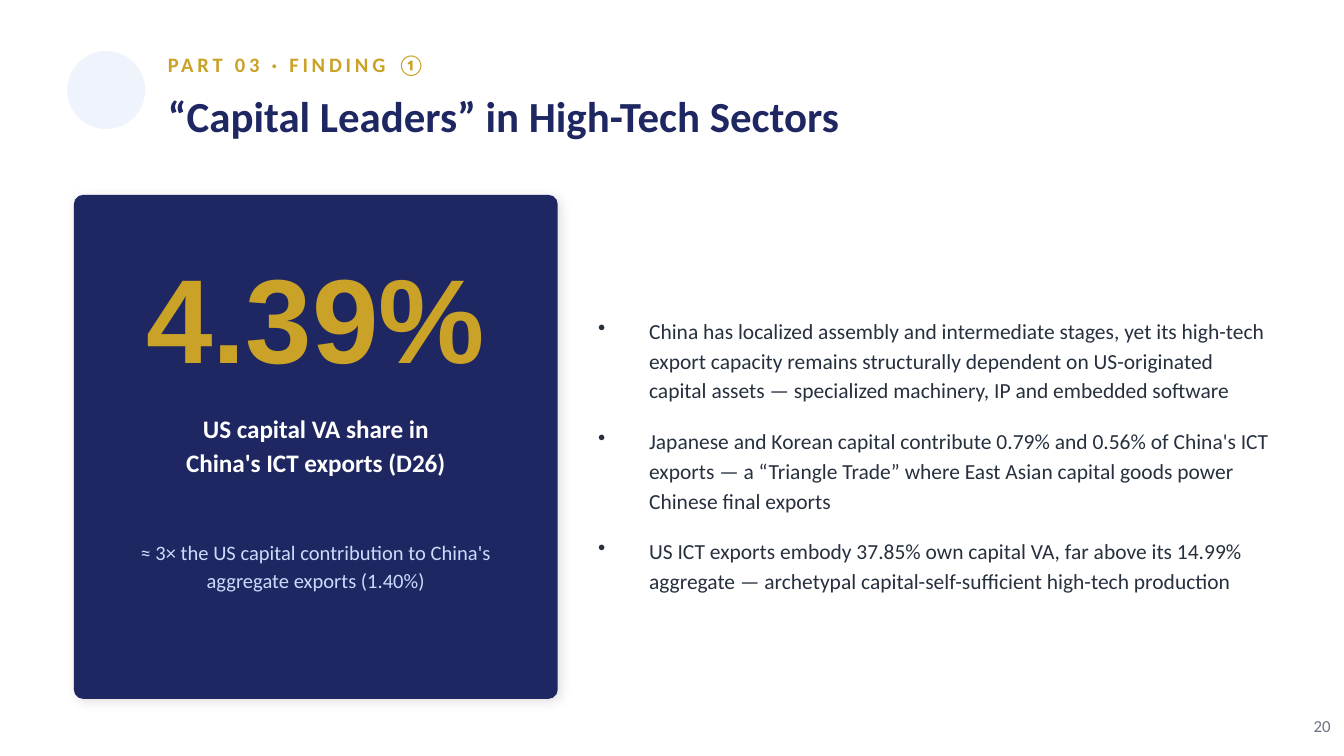
"""Build the "Capital Leaders" finding slide."""
from dataclasses import dataclass

from lxml import etree
from pptx import Presentation
from pptx import util as u
from pptx.dml.color import RGBColor
from pptx.enum import shapes, text
from pptx.oxml.ns import qn


@dataclass(frozen=True)
class Theme:
    font: str = "Calibri"
    figure_font: str = "Arial"
    navy: str = "1E2761"
    gold: str = "C9A227"
    pale: str = "EEF3FC"
    ice: str = "CADCFC"
    white: str = "FFFFFF"
    ink: str = "26303E"
    grey: str = "6B7585"
    number: float = 9
    small: float = 11
    body: float = 11.5
    label: float = 13.5
    title: float = 23
    figure: float = 64


T = Theme()
LEFT, CENTER, RIGHT = (text.PP_ALIGN.LEFT, text.PP_ALIGN.CENTER, text.PP_ALIGN.RIGHT)

BULLETS = [
    "China has localized assembly and intermediate stages, yet its high-tech export "
    "capacity remains structurally dependent on US-originated capital assets — "
    "specialized machinery, IP and embedded software",
    "Japanese and Korean capital contribute 0.79% and 0.56% of China's ICT exports — "
    "a “Triangle Trade” where East Asian capital goods power Chinese final exports",
    "US ICT exports embody 37.85% own capital VA, far above its 14.99% aggregate — "
    "archetypal capital-self-sufficient high-tech production",
]


def inches(*values):
    return [u.Inches(v) for v in values]


def add_bullet(p, indent):
    pPr = p._p.get_or_add_pPr()
    pPr.set("marL", str(u.Inches(indent)))
    pPr.set("indent", str(-u.Inches(indent)))
    etree.SubElement(pPr, qn("a:buSzPct"), val="100000")
    etree.SubElement(pPr, qn("a:buChar"), char="•")


def add_text(s, box, lines, size, color, bold=False, name=T.font, align=LEFT,
             leading=None, after=None, tracking=None, bullet=None):
    tf = s.shapes.add_textbox(*inches(*box)).text_frame
    frame = dict(word_wrap=True, vertical_anchor=text.MSO_ANCHOR.MIDDLE,
                 margin_left=0, margin_top=0, margin_right=0, margin_bottom=0)
    for key, value in frame.items():
        setattr(tf, key, value)
    for i, line in enumerate(lines):
        p = tf.paragraphs[0] if i == 0 else tf.add_paragraph()
        if bullet:
            add_bullet(p, bullet)
        spacing = dict(alignment=align, line_spacing=leading and u.Pt(leading),
                       space_after=after and u.Pt(after))
        for key, value in spacing.items():
            setattr(p, key, value)
        r = p.add_run()
        r.text = line
        for key, value in dict(name=name, size=u.Pt(size), bold=bold).items():
            setattr(r.font, key, value)
        r.font.color.rgb = RGBColor.from_string(color)
        if tracking:
            r._r.get_or_add_rPr().set("spc", str(tracking * 100))
        etree.SubElement(p._p, qn("a:endParaRPr"), sz=str(int(size * 100)))


def add_panel(s, kind, box, color):
    sp = s.shapes.add_shape(kind, *inches(*box))
    sp.fill.solid()
    sp.fill.fore_color.rgb = RGBColor.from_string(color)
    sp.line.fill.background()
    sp.shadow.inherit = False
    return sp


def add_shadow(sp, blur, distance, angle, opacity):
    effects = sp._element.spPr.find(qn("a:effectLst"))
    shadow = etree.SubElement(
        effects, qn("a:outerShdw"), blurRad=str(u.Pt(blur)), dist=str(u.Pt(distance)),
        dir=str(angle * 60000), algn="bl", rotWithShape="0")
    color = etree.SubElement(shadow, qn("a:srgbClr"), val="000000")
    etree.SubElement(color, qn("a:alpha"), val=str(opacity * 1000))


def add_header(s):
    add_panel(s, shapes.MSO_SHAPE.OVAL, (0.5, 0.38, 0.58, 0.58), T.pale)
    add_text(s, (1.25, 0.34, 8, 0.28), ["PART 03 · FINDING ①"], T.small, T.gold,
             bold=True, tracking=2)
    add_text(s, (1.25, 0.58, 8.3, 0.55), ["“Capital Leaders” in High-Tech Sectors"],
             T.title, T.navy, bold=True)


def add_figure_card(s):
    card = add_panel(s, shapes.MSO_SHAPE.ROUNDED_RECTANGLE, (0.55, 1.45, 3.6, 3.75), T.navy)
    card.adjustments[0] = 0.019
    add_shadow(card, blur=6, distance=2, angle=45, opacity=13)
    left, width = 0.75, 3.2
    add_text(s, (left, 1.85, width, 1), ["4.39%"], T.figure, T.gold, bold=True,
             name=T.figure_font, align=CENTER)
    add_text(s, (left, 2.95, width, 0.7),
             ["US capital VA share in", "China's ICT exports (D26)"],
             T.label, T.white, bold=True, align=CENTER, leading=18)
    add_text(s, (left, 3.85, width, 0.7),
             ["≈ 3× the US capital contribution to China's aggregate exports (1.40%)"],
             T.small, T.ice, align=CENTER, leading=15)


def main():
    prs = Presentation()
    prs.slide_width = u.Inches(10)
    prs.slide_height = prs.slide_width * 9 // 16
    s = prs.slides.add_slide(prs.slide_layouts[6])
    add_text(s, (9.45, 5.25, 0.45, 0.3), ["20"], T.number, T.grey, align=RIGHT)
    add_header(s)
    add_figure_card(s)
    add_text(s, (4.45, 1.6, 5, 3.55), BULLETS, T.body, T.ink,
             leading=16, after=11, bullet=0.38)
    prs.save("out.pptx")


if __name__ == "__main__":
    main()
